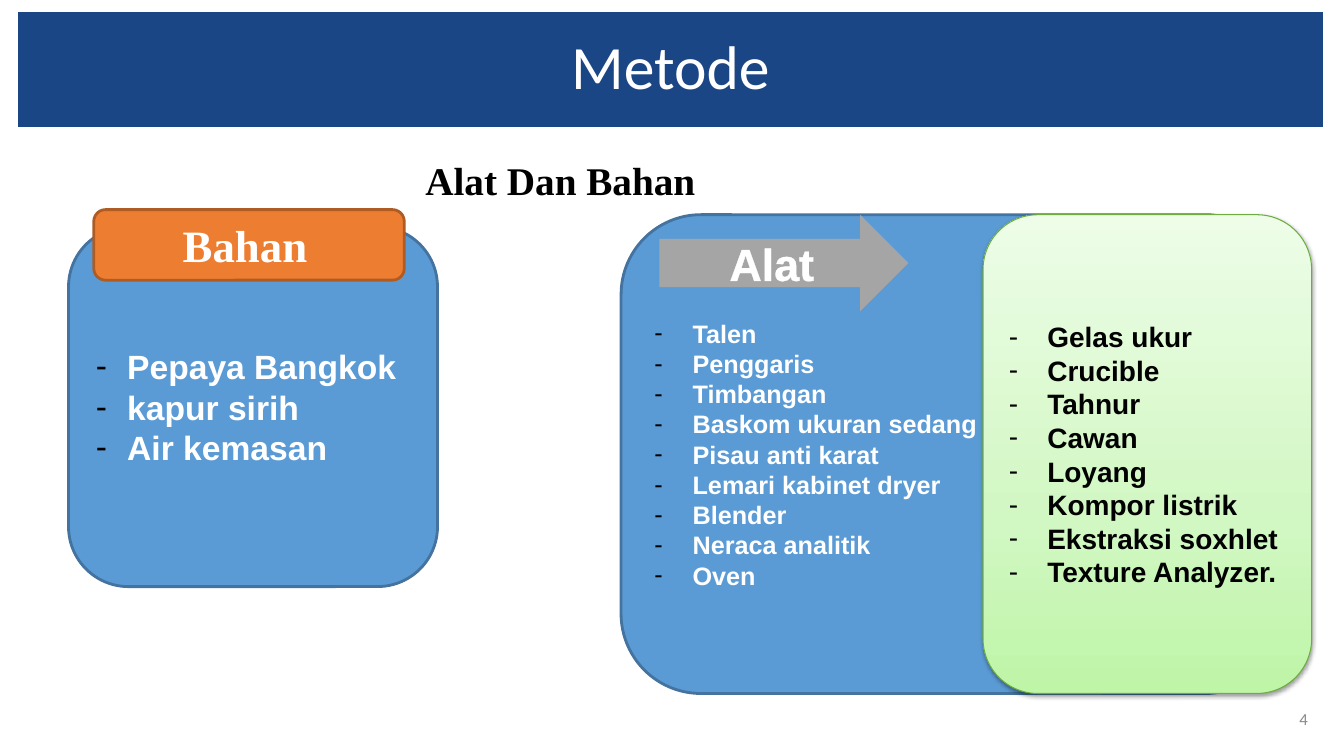
from lxml import etree
from pptx import Presentation
from pptx.dml.color import RGBColor
from pptx.enum.shapes import MSO_SHAPE as Shape
from pptx.enum.text import MSO_ANCHOR as Anchor, PP_ALIGN as Align
from pptx.oxml import parse_xml
from pptx.oxml.ns import nsdecls, qn
from pptx.util import Pt

PX = 9144  # EMU; 100 px to the inch

TITLE = "Metode"
SUBTITLE = "Alat Dan Bahan"
BAHAN = ["Pepaya Bangkok", "kapur sirih", "Air kemasan"]
ALAT = ["Talen", "Penggaris", "Timbangan", "Baskom ukuran sedang",
        "Pisau anti karat", "Lemari kabinet dryer", "Blender",
        "Neraca analitik", "Oven"]
ALAT_LAB = ["Gelas ukur", "Crucible", "Tahnur", "Cawan", "Loyang",
            "Kompor listrik", "Ekstraksi soxhlet", "Texture Analyzer."]
PAGE = "4"

WHITE, BLACK, NAVY = "FFFFFF", "000000", "1B4685"
BLUE, BLUE_EDGE = "5B9BD5", "43739E"
ORANGE, ORANGE_EDGE = "ED7D31", "AF5C24"
GREEN_STOPS = [(0, "BEF5A7"), (35, "D1F7C2"), (100, "EDFDE7")]
GREEN_EDGE, GREY, PAGE_GREY = "6DAC43", "A5A5A5", "888888"
SERIF = "Times New Roman"


def color(hex_text):
    return RGBColor.from_string(hex_text)


def px(*lengths):
    return [length * PX for length in lengths]


def write(shape, lines, size, font="Arial", ink=WHITE, bold=True,
          align=Align.LEFT, anchor=Anchor.MIDDLE, spacing=None, indent=0,
          dash=False, wrap=True):
    """Fill a shape with one paragraph per line; dash hangs a bullet in the indent."""
    frame = shape.text_frame
    frame.word_wrap = wrap
    frame.vertical_anchor = anchor
    for i, line in enumerate(lines):
        paragraph = frame.add_paragraph() if i else frame.paragraphs[0]
        paragraph.alignment = align
        if spacing:
            paragraph.line_spacing = spacing
        if indent:
            paragraph_format = paragraph._p.get_or_add_pPr()
            paragraph_format.set("marL", str(indent * PX))
            paragraph_format.set("indent", str(-indent * PX if dash else 0))
            if dash:
                bullet_color = etree.SubElement(paragraph_format, qn("a:buClr"))
                etree.SubElement(bullet_color, qn("a:srgbClr"), val=BLACK)
                etree.SubElement(paragraph_format, qn("a:buFont"), typeface="Arial")
                etree.SubElement(paragraph_format, qn("a:buChar"), char="-")
        run = paragraph.add_run()
        run.text = line
        run.font.size = Pt(size)
        run.font.name = font
        run.font.bold = bold
        run.font.color.rgb = color(ink)


def add_panel(preset, box, fill=None, edge=None, edge_width=2):
    panel = slide.shapes.add_shape(preset, *px(*box))
    panel.shadow.inherit = False
    if fill:
        panel.fill.solid()
        panel.fill.fore_color.rgb = color(fill)
    if edge:
        panel.line.color.rgb = color(edge)
        panel.line.width = Pt(edge_width)
    else:
        panel.line.fill.background()
    return panel


def add_gradient(panel, stops, angle):
    stop_xml = "".join(
        f'<a:gs pos="{pos * 1000}"><a:srgbClr val="{tint}"/></a:gs>'
        for pos, tint in stops)
    panel._element.spPr.find(qn("a:prstGeom")).addnext(parse_xml(
        f'<a:gradFill {nsdecls("a")} rotWithShape="1"><a:gsLst>{stop_xml}</a:gsLst>'
        f'<a:lin ang="{angle * 60000}" scaled="0"/></a:gradFill>'))


def add_shadow(panel):
    panel._element.spPr.find(qn("a:effectLst")).append(parse_xml(
        f'<a:outerShdw {nsdecls("a")} blurRad="40000" dist="20000" dir="5400000" '
        'rotWithShape="0"><a:srgbClr val="000000"><a:alpha val="38000"/>'
        '</a:srgbClr></a:outerShdw>'))


def outline_text(shape, ink, width):
    run = shape.text_frame.paragraphs[0].runs[0]
    run.font._element.insert(0, parse_xml(
        f'<a:ln {nsdecls("a")} w="{int(Pt(width))}"><a:solidFill>'
        f'<a:srgbClr val="{ink}"/></a:solidFill></a:ln>'))


deck = Presentation()
deck.slide_width, deck.slide_height = px(1333, 750)
slide = deck.slides.add_slide(deck.slide_layouts[5])

title = slide.shapes.title
title.left, title.top, title.width, title.height = px(18, 12, 1294, 114)
title.fill.solid()
title.fill.fore_color.rgb = color(NAVY)
write(title, [TITLE], 44, "Calibri", bold=False, align=Align.CENTER, spacing=0.9)

page_number = slide.shapes.add_textbox(*px(1250, 693, 57, 40))
write(page_number, [PAGE], 12, "Calibri", PAGE_GREY, bold=False, align=Align.RIGHT)

bahan_panel = add_panel(Shape.ROUNDED_RECTANGLE, (68, 225, 366, 357), BLUE, BLUE_EDGE)
write(bahan_panel, BAHAN, 24, align=Align.JUSTIFY, indent=31, dash=True)

alat_panel = add_panel(Shape.ROUNDED_RECTANGLE, (616, 213, 659, 475), BLUE, BLUE_EDGE)
write(alat_panel, ALAT, 18, indent=38, dash=True)

subtitle = slide.shapes.add_textbox(*px(412, 143, 301, 64))
write(subtitle, [SUBTITLE], 28, SERIF, BLACK, anchor=Anchor.TOP, spacing=1.15, wrap=False)

bahan_label = add_panel(Shape.ROUNDED_RECTANGLE, (93, 208, 308, 70), ORANGE, ORANGE_EDGE)
write(bahan_label, ["Bahan"], 32, SERIF, indent=75)

alat_arrow = add_panel(Shape.RIGHT_ARROW, (654, 213, 247, 96), GREY)
write(alat_arrow, ["Alat"], 32, align=Align.CENTER)
outline_text(alat_arrow, WHITE, 1.06)

lab_panel = add_panel(Shape.ROUNDED_RECTANGLE, (975, 213, 326, 475),
                      edge=GREEN_EDGE, edge_width=0.75)
add_gradient(lab_panel, GREEN_STOPS, 270)
add_shadow(lab_panel)
write(lab_panel, ALAT_LAB, 20, ink=BLACK, indent=38, dash=True)

deck.save("out.pptx")
